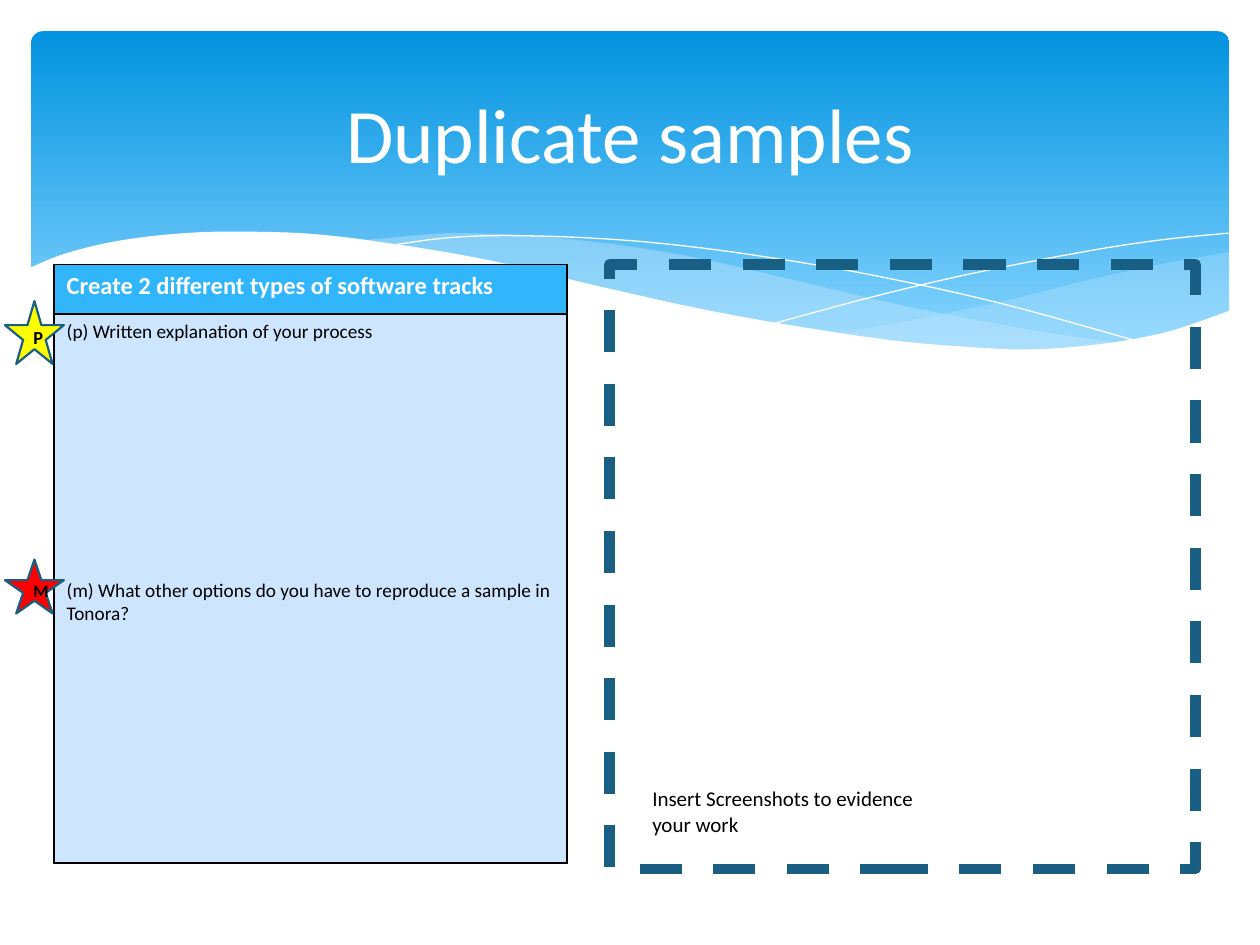
"""Build the "Duplicate samples" worksheet slide."""
from lxml.etree import SubElement
from pptx import Presentation
from pptx.dml.color import RGBColor
from pptx.enum.dml import MSO_LINE
from pptx.enum.shapes import MSO_SHAPE
from pptx.enum.text import MSO_ANCHOR, PP_ALIGN
from pptx.oxml import parse_xml
from pptx.oxml.ns import nsdecls, qn
from pptx.util import Cm, Pt

WHITE = RGBColor(0xFF, 0xFF, 0xFF)
BLACK = RGBColor(0, 0, 0)
DEEP = RGBColor(0x02, 0x93, 0xE0)
LIGHT = RGBColor(0x83, 0xD3, 0xFE)
PALE = RGBColor(0xC6, 0xE7, 0xFC)
NAVY = RGBColor(0x19, 0x5F, 0x84)
HEAD = RGBColor(0x31, 0xB6, 0xFD)
BODY = RGBColor(0xCE, 0xE5, 0xFE)
RED = RGBColor(0xFF, 0, 0)
YELLOW = RGBColor(0xFF, 0xFF, 0)
FONT = "Calibri"

TITLE = "Duplicate samples"
TASK = "Create 2 different types of software tracks"
STEPS = [
    ("(p) Written explanation of your process", 0),
    ("(m) What other options do you have to reproduce a sample in Tonora?", 134),
]
HINT = "Insert Screenshots to evidence your work"
STARS = [("M", 11.28, 1.09, RED, 10), ("P", 6.07, 1.27, YELLOW, 10.5)]

BANDS = [
    (29, [
        [(16.79, 6.73), (18.52, 6.43), (20.45, 6.02), (21.87, 5.66), (23.39, 5.33),
         (24.79, 5.08)],
        [(24.79, 6.27), (23.75, 6.65), (22.58, 6.91), (21.44, 7.04), (20.4, 7.06),
         (19.23, 7.01), (17.91, 6.88), (16.79, 6.73)],
    ]),
    (40, [
        [(7.26, 4.85), (8.33, 4.75), (9.17, 4.7), (10.67, 4.75), (12.42, 4.93),
         (14.1, 5.21), (15.98, 5.64), (17.93, 6.1), (19.69, 6.45), (21.26, 6.73),
         (22.68, 6.93)],
        [(22.68, 6.93), (21.54, 7.04), (20.22, 7.06), (18.69, 6.99), (16.89, 6.76),
         (14.83, 6.4), (12.47, 5.89), (11.4, 5.64), (9.73, 5.26), (8.2, 4.98),
         (7.26, 4.85)],
    ]),
]
STROKES = [
    [(7.85, 4.95), (8.97, 4.8), (10.19, 4.75), (11.91, 4.8), (13.54, 4.93),
     (15.44, 5.18), (17.65, 5.56), (20.19, 6.12), (23.04, 6.91)],
    [(15.57, 6.53), (17.65, 5.97), (19.71, 5.49), (22, 5.05), (23.47, 4.83),
     (24.77, 4.7)],
]
WAVE = [
    [(0.58, 5.41), (1.32, 5.11), (2.41, 4.85), (3.71, 4.7), (4.9, 4.67), (6.35, 4.72),
     (8.03, 4.93), (9.93, 5.26), (12.07, 5.77), (14.1, 6.22), (15.9, 6.55),
     (17.98, 6.86), (19.76, 7.01), (20.9, 7.04), (22.23, 6.93), (23.37, 6.73),
     (24.13, 6.5), (24.82, 6.25)],
    [(24.82, 8.36), (0.58, 8.36)],
]


def smooth(knots, steps=6):
    """Return points on a Catmull-Rom curve through the knots."""
    if len(knots) < 3:
        return knots
    pad = [knots[0], *knots, knots[-1]]
    out = [knots[0]]
    for quad in zip(pad, pad[1:], pad[2:], pad[3:]):
        for i in range(1, steps + 1):
            t = i / steps
            out.append(tuple(
                b + ((c - a) * t + (2 * a - 5 * b + 4 * c - d) * t ** 2
                     + (3 * b - a - 3 * c + d) * t ** 3) / 2
                for a, b, c, d in zip(*quad)))
    return out


def trace(shapes, curves, close=True):
    """Draw curves end to end as one outline."""
    dots = [(Cm(x), Cm(y)) for knots in curves for x, y in smooth(knots)]
    pen = shapes.build_freeform(*dots[0])
    pen.add_line_segments(dots[1:], close=close)
    shape = pen.convert_to_shape()
    shape.shadow.inherit = False
    shape.line.fill.background()
    shape.fill.background()
    return shape


def paint(part, color):
    """Give a fill one solid colour."""
    part.fill.solid()
    part.fill.fore_color.rgb = color


def edge(shape, color, width):
    """Outline a shape."""
    shape.line.color.rgb = color
    shape.line.width = Pt(width)


def write(para, text, size, color=BLACK, bold=False):
    """Add one formatted run."""
    run = para.add_run()
    run.text = text
    font = run.font
    font.name, font.size, font.bold = FONT, Pt(size), bold
    font.color.rgb = color


def add_sky(shapes):
    """Draw the blue banner and its waves."""
    sky = shapes.add_shape(
        MSO_SHAPE.ROUNDED_RECTANGLE, Cm(0.63), Cm(0.63), Cm(24.15), Cm(6.86))
    sky.adjustments[0] = 0.034
    sky.shadow.inherit = False
    sky.line.fill.background()
    sky.fill.gradient()
    sky.fill.gradient_angle = 270
    for stop, color, place in zip(sky.fill.gradient_stops, (DEEP, LIGHT), (0, 0.9)):
        stop.color.rgb = color
        stop.position = place
    for alpha, curves in BANDS:
        band = trace(shapes, curves)
        paint(band, PALE)
        tint = next(band._element.spPr.iter(qn("a:srgbClr")))
        SubElement(tint, qn("a:alpha"), val=str(alpha * 1000))
    for knots in STROKES:
        edge(trace(shapes, [knots], close=False), WHITE, 0)
    paint(trace(shapes, WAVE), WHITE)


def add_title(shapes):
    """Place the title in front of the banner."""
    title = shapes.title
    title.left, title.top, title.width, title.height = Cm(1.27), Cm(0.94), Cm(22.86), Cm(3.48)
    shapes._spTree.append(title._element)
    frame = title.text_frame
    frame.vertical_anchor = MSO_ANCHOR.MIDDLE
    para = frame.paragraphs[0]
    para.alignment = PP_ALIGN.CENTER
    write(para, TITLE, 44, WHITE)


def add_frame(shapes):
    """Draw the dashed area and its hint."""
    box = shapes.add_shape(MSO_SHAPE.RECTANGLE, Cm(12.29), Cm(5.33), Cm(11.81), Cm(12.19))
    box.shadow.inherit = False
    box.fill.background()
    edge(box, NAVY, 6)
    box.line.dash_style = MSO_LINE.DASH
    hint = shapes.add_textbox(Cm(12.9), Cm(15.72), Cm(5.99), Cm(1.27)).text_frame
    hint.word_wrap = True
    write(hint.paragraphs[0], HINT, 12)


def add_tasks(shapes):
    """Add the task table."""
    grid = shapes.add_table(2, 1, Cm(1.09), Cm(5.33), Cm(10.34), Cm(12.07)).table
    grid.columns[0].width = Cm(10.34)
    for row, high, color in zip(grid.rows, (1, 11.07), (HEAD, BODY)):
        row.height = Cm(high)
        cell = row.cells[0]
        paint(cell, color)
        props = cell._tc.get_or_add_tcPr()
        for i, side in enumerate("LRTB"):
            props.insert(i, parse_xml(
                f'<a:ln{side} {nsdecls("a")} w="12700"><a:solidFill>'
                f'<a:srgbClr val="{BLACK}"/></a:solidFill></a:ln{side}>'))
    write(grid.cell(0, 0).text_frame.paragraphs[0], TASK, 14, WHITE, True)
    frame = grid.cell(1, 0).text_frame
    for i, (text, gap) in enumerate(STEPS):
        para = frame.add_paragraph() if i else frame.paragraphs[0]
        para.space_before = Pt(gap)
        write(para, text, 11)


def add_stars(shapes):
    """Add the grade stars."""
    for mark, top, high, color, size in STARS:
        star = shapes.add_shape(MSO_SHAPE.STAR_5_POINT, Cm(0.1), Cm(top), Cm(1.19), Cm(high))
        star.shadow.inherit = False
        paint(star, color)
        edge(star, NAVY, 1.25)
        frame = star.text_frame
        frame.vertical_anchor = MSO_ANCHOR.MIDDLE
        para = frame.paragraphs[0]
        para.alignment = PP_ALIGN.CENTER
        write(para, mark, size, bold=True)


def main():
    """Assemble and save the slide."""
    deck = Presentation()
    deck.slide_width, deck.slide_height = Cm(25.4), Cm(19.05)
    shapes = deck.slides.add_slide(deck.slide_layouts[5]).shapes
    for add in (add_sky, add_title, add_frame, add_tasks, add_stars):
        add(shapes)
    deck.save("out.pptx")


if __name__ == "__main__":
    main()
